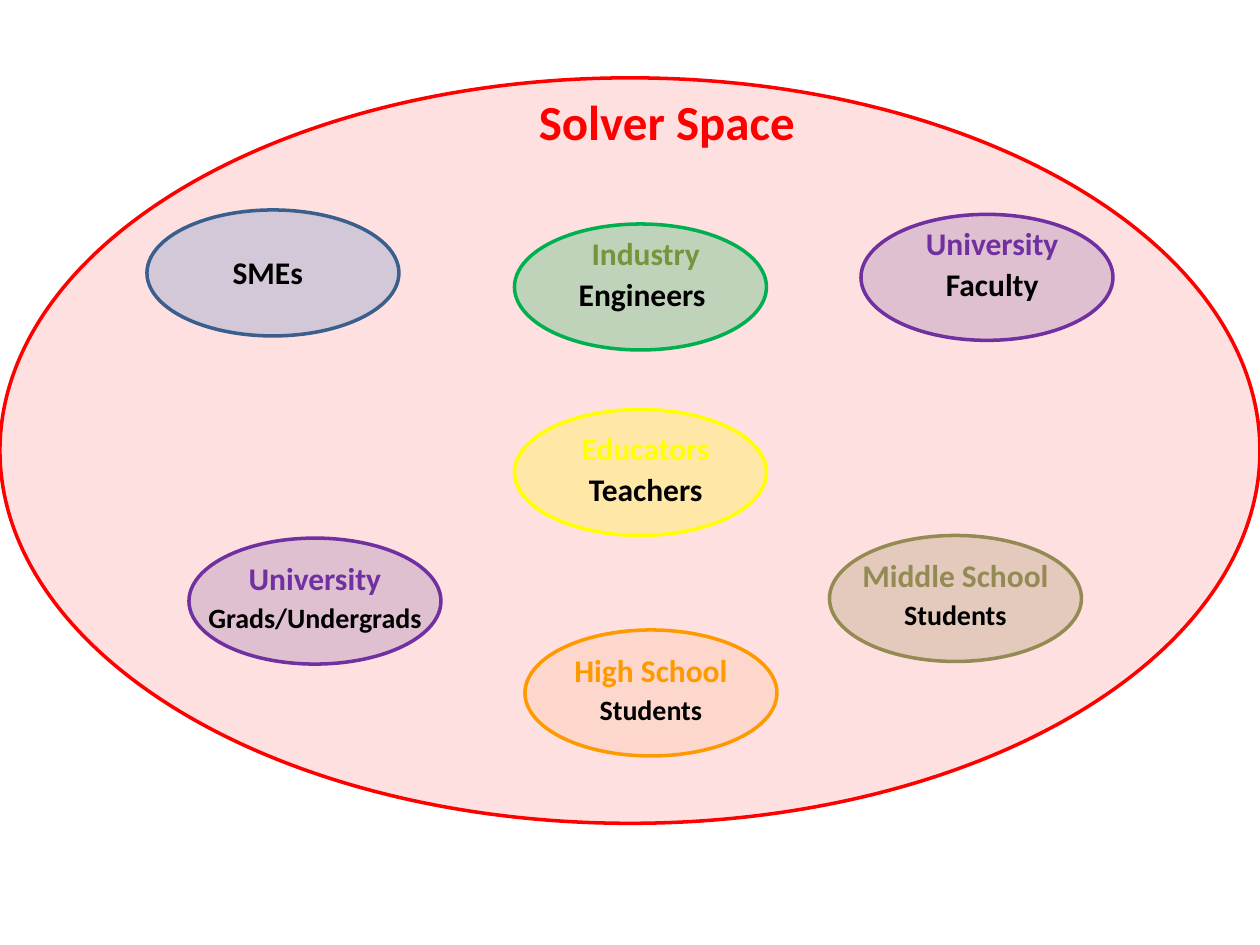
from dataclasses import dataclass

from lxml import etree
from pptx import Presentation
from pptx.dml.color import RGBColor
from pptx.enum import shapes, text
from pptx.oxml import ns
from pptx.util import Pt


@dataclass(frozen=True)
class Theme:
    """Colours, type sizes and measures of the slide."""
    font: str = "Calibri"
    red: str = "FF0000"
    black: str = "000000"
    blue: str = "4F81BD"
    navy: str = "3A5F8C"
    green: str = "00B050"
    olive: str = "77933C"
    mauve: str = "8064A2"
    purple: str = "7030A0"
    yellow: str = "FFFF00"
    peach: str = "FAC090"
    orange: str = "FF9900"
    tan: str = "948A54"
    title: int = 28
    body: int = 18
    small: int = 16
    line: int = 2
    gap: int = 6


T = Theme()
OVAL = (144, 72)
WIDE = (0, 12.5, 144, 46)
GROUPS = [
    ((84, 120), T.blue, T.navy, (12, 21, 114, 29),
     [("SMEs", T.body, T.black)]),
    ((294, 128), T.green, T.green, (18, 6.5, 114, 65.5),
     [("Industry", T.body, T.olive), ("Engineers ", T.body, T.black)]),
    ((492, 122.5), T.mauve, T.purple, (18, 6, 114, 48),
     [("University", T.body, T.purple), ("Faculty", T.body, T.black)]),
    ((294, 234), T.yellow, T.yellow, (18, 12, 114, 48),
     [("Educators", T.body, T.yellow), ("Teachers", T.body, T.black)]),
    ((108, 307.5), T.mauve, T.purple, WIDE,
     [("University", T.body, T.purple),
      ("Grads/Undergrads", T.small, T.black)]),
    ((300, 360), T.peach, T.orange, WIDE,
     [("High School", T.body, T.orange), ("Students", T.small, T.black)]),
    ((474, 306), T.tan, T.tan, WIDE,
     [("Middle School", T.body, T.tan), ("Students", T.small, T.black)]),
]


def apply(item, values):
    """Set each named attribute of an item."""
    for name, value in values.items():
        setattr(item, name, value)


def oval(parts, box, fill, line, alpha):
    """Draw an outlined ellipse with a see-through fill."""
    shape = parts.add_shape(shapes.MSO_SHAPE.OVAL, *map(Pt, box))
    shape.shadow.inherit = False
    shape.fill.solid()
    shape.fill.fore_color.rgb = RGBColor.from_string(fill)
    tint = shape.fill._xPr.find(".//" + ns.qn("a:srgbClr"))
    etree.SubElement(tint, ns.qn("a:alpha"), val=str(alpha * 1000))
    shape.line.color.rgb = RGBColor.from_string(line)
    shape.line.width = Pt(T.line)


def label(parts, box, lines):
    """Write centred bold lines in a text box."""
    frame = parts.add_textbox(*map(Pt, box)).text_frame
    frame.word_wrap = True
    for i, (words, size, color) in enumerate(lines):
        para = frame.add_paragraph() if i else frame.paragraphs[0]
        apply(para, {"alignment": text.PP_ALIGN.CENTER,
                     "line_spacing": 0.8 if len(lines) > 1 else 1.0,
                     "space_before": Pt(T.gap if i else 0)})
        run = para.add_run()
        run.text = words
        apply(run.font, {"name": T.font, "size": Pt(size), "bold": True})
        run.font.color.rgb = RGBColor.from_string(color)


def space(slide, box):
    """Draw the large solver space with its title."""
    left, top, width, height = box
    oval(slide.shapes, box, T.red, T.red, 12)
    label(slide.shapes, (left + 234, top + 4, 294, 41),
          [("Solver Space", T.title, T.red)])


def group(slide, box, fill, line, inset, lines):
    """Draw one solver group: an ellipse and its label."""
    left, top, width, height = box
    parts = slide.shapes.add_group_shape().shapes
    oval(parts, box, fill, line, 25)
    x, y, w, h = inset
    label(parts, (left + x, top + y, w, h), lines)


def main():
    """Build and save the slide."""
    deck = Presentation()
    apply(deck, {"slide_width": Pt(720), "slide_height": Pt(540)})
    slide = deck.slides.add_slide(deck.slide_layouts[6])
    space(slide, (0, 44.5, 720, 426))
    for spot, *rest in GROUPS:
        group(slide, spot + OVAL, *rest)
    deck.save("out.pptx")


if __name__ == "__main__":
    main()
